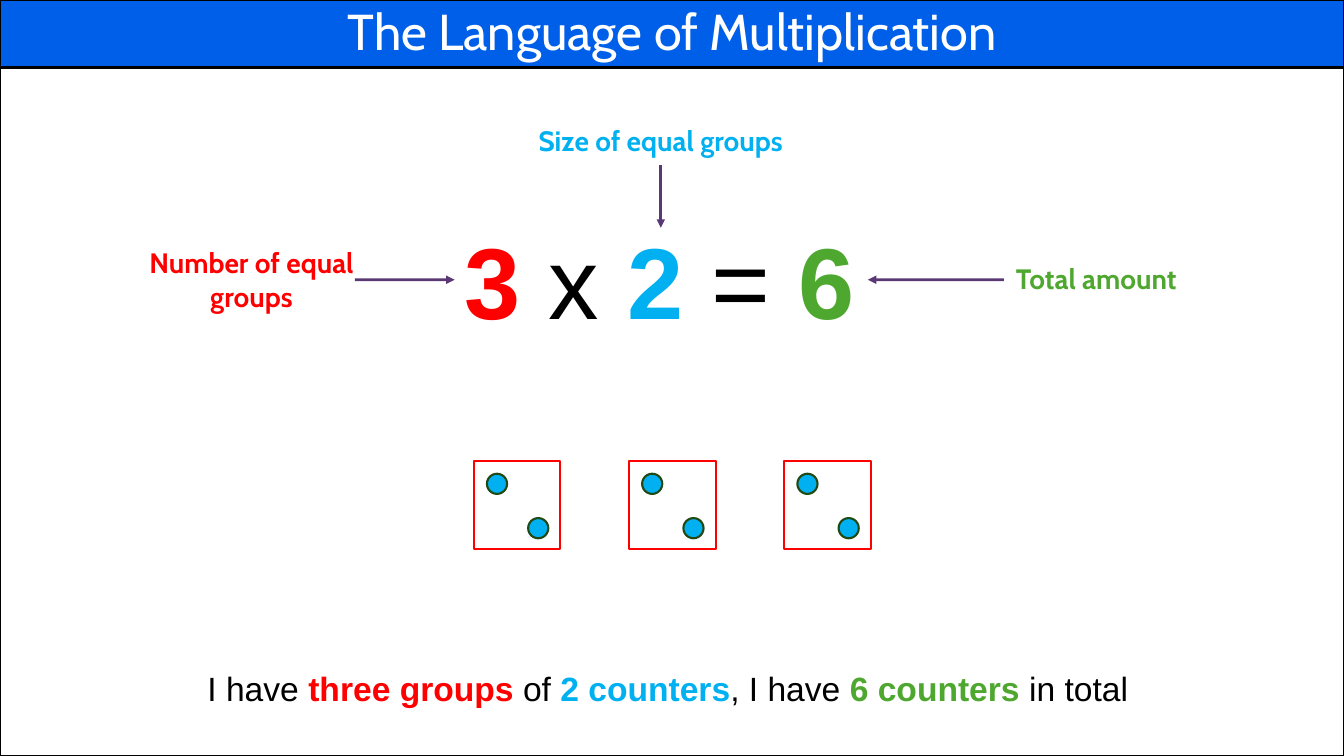
import pptx
import pptx.dml.color
import pptx.enum.shapes
import pptx.enum.text
import pptx.oxml
import pptx.oxml.ns
import pptx.util

COLORS = {
    "black": "000000", "white": "FFFFFF", "banner": "005FE9",
    "red": "FF0000", "blue": "00B0F0", "green": "4EA72E",
    "counter_edge": "224914", "arrow": "593874",
}
SHAPES = pptx.enum.shapes.MSO_SHAPE
CENTER = pptx.enum.text.PP_ALIGN.CENTER
LEFT = pptx.enum.text.PP_ALIGN.LEFT

deck = pptx.Presentation()
deck.slide_width = pptx.util.Inches(13.333)
deck.slide_height = pptx.util.Inches(7.5)
page = deck.slides.add_slide(deck.slide_layouts[6])

# The page is a grid of 100 columns by 100 rows.
column = deck.slide_width / 100
row = deck.slide_height / 100


def draw(kind, left, top, width, height, fill, edge):
    shape = page.shapes.add_shape(
        kind, round(left * column), round(top * row), round(width * column), round(height * row))
    shape.shadow.inherit = False
    if fill:
        shape.fill.solid()
        shape.fill.fore_color.rgb = pptx.dml.color.RGBColor.from_string(COLORS[fill])
    else:
        shape.fill.background()
    shape.line.color.rgb = pptx.dml.color.RGBColor.from_string(COLORS[edge])
    shape.line.width = pptx.util.Pt(1.5)
    return shape


def write(box, pieces, size, font="Cabin", align=CENTER, wrap=True):
    """Fill the box with one paragraph of (text, color, bold) pieces."""
    box.text_frame.word_wrap = wrap
    para = box.text_frame.paragraphs[0]
    para.alignment = align
    for text, color, bold in pieces:
        span = para.add_run()
        span.text = text
        span.font.name = font
        span.font.size = pptx.util.Pt(size)
        span.font.bold = bold
        span.font.color.rgb = pptx.dml.color.RGBColor.from_string(COLORS[color])
    return para


# Sentence, equation and labels
sentence = [
    ("I have ", "black", False), ("three groups ", "red", True), ("of ", "black", False),
    ("2 counters", "blue", True), (", I have ", "black", False),
    ("6 counters ", "green", True), ("in total", "black", False),
]
equation = [
    ("3", "red", True), (" x ", "black", False), ("2", "blue", True),
    (" = ", "black", False), ("6", "green", True),
]
plain = {"font": "Arial", "align": LEFT, "wrap": False}
texts = {
    "sentence": (14.7, 87.73, 70.65, 6.67, sentence, 24, plain),
    "equation": (33.83, 28.27, 30.75, 17.47, equation, 72, plain),
    "number": (7.5, 31.87, 22.43, 10.27, [("Number of equal groups", "red", True)], 20, {}),
    "size": (36.98, 15.73, 24.38, 6.13, [("Size of equal groups", "blue", True)], 20, {}),
    "total": (70.65, 34, 21.83, 5.87, [("Total amount", "green", True)], 20, {}),
}
boxes = {}
for name, (left, top, width, height, pieces, size, style) in texts.items():
    box = page.shapes.add_textbox(
        round(left * column), round(top * row), round(width * column), round(height * row))
    write(box, pieces, size, **style)
    box.text_frame.auto_size = pptx.enum.text.MSO_AUTO_SIZE.SHAPE_TO_FIT_TEXT
    boxes[name] = box

# Arrows from the labels to the equation
arrows = {
    "number": (26.4, 37, 33.83, 37),
    "size": (49.17, 21.86, 49.17, 30.13),
    "total": (74.7, 37, 64.58, 37),
}
for name, (x1, y1, x2, y2) in arrows.items():
    arrow = page.shapes.add_connector(
        pptx.enum.shapes.MSO_CONNECTOR.STRAIGHT,
        round(x1 * column), round(y1 * row), round(x2 * column), round(y2 * row))
    arrow.line.color.rgb = pptx.dml.color.RGBColor.from_string(COLORS["arrow"])
    arrow.line.width = pptx.util.Pt(2)
    if name == "size":
        arrow.begin_connect(boxes["size"], 2)
    else:
        arrow.end_connect(boxes["equation"], 1 if name == "number" else 3)
    namespace = pptx.oxml.ns.nsdecls("a")
    arrow.line._get_or_add_ln().append(
        pptx.oxml.parse_xml(f'<a:tailEnd {namespace} type="triangle"/>'))
    arrow._element.spPr.append(pptx.oxml.parse_xml(f"<a:effectLst {namespace}/>"))

# Banner and page frame
banner_height = 8.93
banner = draw(SHAPES.RECTANGLE, 0, 0, 100, banner_height, "banner", "black")
title = write(banner, [("The Language of Multiplication", "white", False)], 36)
title.line_spacing = 0.9
banner.text_frame.vertical_anchor = pptx.enum.text.MSO_ANCHOR.MIDDLE
draw(SHAPES.RECTANGLE, 0, banner_height, 100, 100 - banner_height, None, "black")

# Three groups of two counters
group_top = 60.93
for group in range(3):
    group_left = 35.25 + group * 11.55
    draw(SHAPES.RECTANGLE, group_left, group_top, 6.45, 11.73, "white", "red")
    for across, down in ((4.05, 7.6), (0.98, 1.73)):
        draw(SHAPES.OVAL, group_left + across, group_top + down, 1.5, 2.67,
             "blue", "counter_edge")

deck.save("out.pptx")
